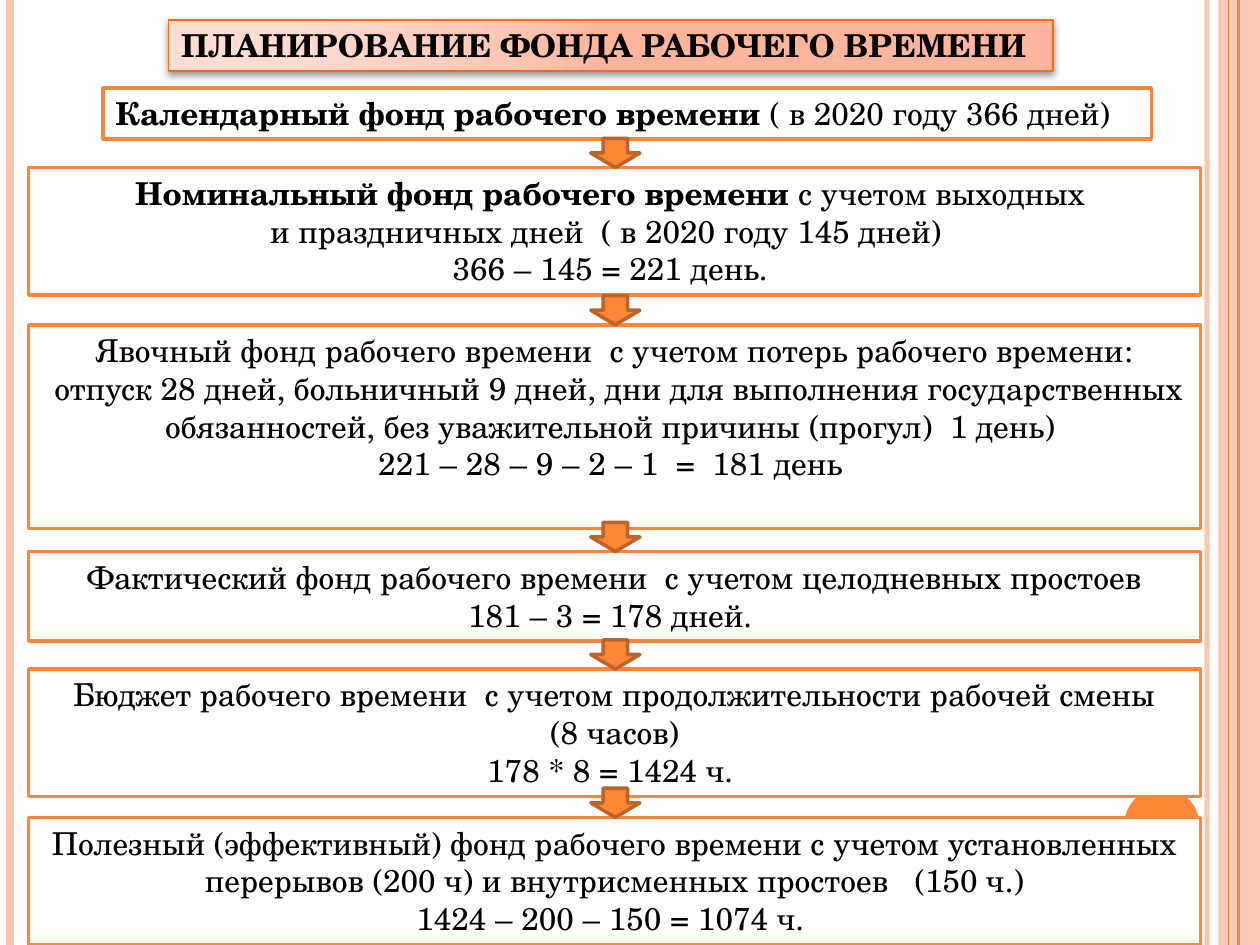
"""Build a slide on planning the working-time fund as a chain of boxes."""
from lxml.etree import SubElement
from pptx import Presentation
from pptx.dml.color import RGBColor
from pptx.enum.shapes import MSO_CONNECTOR as Connector, MSO_SHAPE as Shape
from pptx.enum.text import MSO_ANCHOR as Anchor, PP_ALIGN as Align
from pptx.oxml import parse_xml
from pptx.oxml.ns import nsdecls, qn
from pptx.util import Cm, Pt

ORANGE = RGBColor(0xFE, 0x86, 0x37)
DARK_ORANGE = RGBColor(0xBC, 0x63, 0x29)
TITLE_BORDER = RGBColor(0xFF, 0x6B, 0x0A)
PINK = RGBColor(0xFE, 0xC3, 0xAE)
WHITE = RGBColor(0xFF, 0xFF, 0xFF)
BLACK = RGBColor(0, 0, 0)
TITLE_STOPS = [(0, "FFDED5"), (30, "FFDBD0"), (75, "FFC8B6"), (100, "FFB59B")]

SLIDE_WIDTH, SLIDE_HEIGHT = 25.4, 19.05
STAGE_LEFT, STAGE_WIDTH = 0.58, 23.62
ARROW_LEFT, ARROW_WIDTH, ARROW_HEIGHT = 11.91, 0.99, 0.59

STRIPES = [(24.33, 3, 93), (0.2, 4.5, 100)]
THIN_STRIPES = [(24.97, 1.5), (24.77, 0.75)]

TITLE = [("ПЛАНИРОВАНИЕ ФОНДА РАБОЧЕГО ВРЕМЕНИ", "")]
CALENDAR_FUND = [("Календарный фонд рабочего времени ", "( в 2020 году 366 дней)")]
STAGES = [
    (3.38, 2.57, [
        ("Номинальный фонд рабочего времени ", "с учетом выходных "),
        ("", "и праздничных дней  ( в 2020 году 145 дней)  "),
        ("", "366 – 145 = 221 день. ")]),
    (6.55, 4.11, [
        ("", "Явочный фонд рабочего времени  с учетом потерь рабочего времени:"),
        ("", " отпуск 28 дней, больничный 9 дней, дни для выполнения государственных "
             "обязанностей, без уважительной причины (прогул)  1 день) "),
        ("", "221 – 28 – 9 – 2 – 1  =  181 день ")]),
    (11.12, 1.8, [
        ("", "Фактический фонд рабочего времени  с учетом целодневных простоев"),
        ("", "181 – 3 = 178 дней. ")]),
    (13.49, 2.57, [
        ("", "Бюджет рабочего времени  с учетом продолжительности рабочей смены"),
        ("", "(8 часов)"),
        ("", "178 * 8 = 1424 ч. ")]),
    (16.48, 2.57, [
        ("", "Полезный (эффективный) фонд рабочего времени с учетом установленных "
             "перерывов (200 ч) и внутрисменных простоев   (150 ч.)"),
        ("", "1424 – 200 – 150 = 1074 ч. ")]),
]


class FundSlide:
    """Slide with one shared style and a method for each kind of element."""

    font_name = "TeX Gyre Schola"
    font_size = Pt(18)

    def __init__(self, slide):
        self.slide = slide

    def set_opacity(self, element, percent):
        for color in element.iter(qn("a:srgbClr")):
            SubElement(color, qn("a:alpha"), val=str(percent * 1000))

    def stripe(self, left, weight, color, opacity=100):
        x = Cm(left)
        line = self.slide.shapes.add_connector(Connector.STRAIGHT, x, 0, x, Cm(SLIDE_HEIGHT))
        line.line.color.rgb = color
        line.line.width = Pt(weight)
        properties = line.line._get_or_add_ln().getparent()
        if opacity < 100:
            self.set_opacity(properties, opacity)
        SubElement(properties, qn("a:effectLst"))

    def figure(self, preset, left, top, width, height, fill, border=None, weight=2):
        figure = self.slide.shapes.add_shape(preset, Cm(left), Cm(top), Cm(width), Cm(height))
        figure.shadow.inherit = False
        figure.fill.solid()
        figure.fill.fore_color.rgb = fill
        if border is None:
            figure.line.fill.background()
        else:
            figure.line.color.rgb = border
            figure.line.width = Pt(weight)
        return figure

    def side_band(self, left, width, opacity):
        band = self.figure(Shape.RECTANGLE, left, 0, width, SLIDE_HEIGHT, PINK)
        self.set_opacity(band.element.spPr, opacity)

    def box(self, left, top, width, height, lines, align, border=ORANGE, weight=2):
        box = self.figure(Shape.RECTANGLE, left, top, width, height, WHITE, border, weight)
        frame = box.text_frame
        frame.word_wrap = True
        frame.vertical_anchor = Anchor.TOP
        for index, parts in enumerate(lines):
            paragraph = frame.add_paragraph() if index else frame.paragraphs[0]
            paragraph.alignment = align
            for text, bold in zip(parts, (True, False)):
                if text:
                    run = paragraph.add_run()
                    run.text = text
                    run.font.name = self.font_name
                    run.font.size = self.font_size
                    run.font.bold = bold
                    run.font.color.rgb = BLACK
        return box

    def title(self, left, top, width, height, lines):
        properties = self.box(left, top, width, height, lines, Align.LEFT,
                              TITLE_BORDER, 1).element.spPr
        stops = "".join(f'<a:gs pos="{position * 1000}"><a:srgbClr val="{color}"/></a:gs>'
                        for position, color in TITLE_STOPS)
        gradient = parse_xml(
            f'<a:gradFill {nsdecls("a")} rotWithShape="1"><a:gsLst>{stops}</a:gsLst>'
            '<a:path path="circle"><a:fillToRect l="5000" t="100000" r="120000" b="10000"/>'
            '</a:path></a:gradFill>')
        properties.replace(properties.find(qn("a:solidFill")), gradient)
        shadow = SubElement(properties.find(qn("a:effectLst")), qn("a:outerShdw"),
                            blurRad=str(Pt(4)), dist=str(Pt(2)), dir="5400000", rotWithShape="0")
        SubElement(shadow, qn("a:srgbClr"), val=str(BLACK))
        self.set_opacity(shadow, 40)

    def arrow_to(self, top):
        self.figure(Shape.DOWN_ARROW, ARROW_LEFT, top - ARROW_HEIGHT,
                    ARROW_WIDTH, ARROW_HEIGHT, ORANGE, DARK_ORANGE)


def main():
    deck = Presentation()
    deck.slide_width, deck.slide_height = Cm(SLIDE_WIDTH), Cm(SLIDE_HEIGHT)
    fund = FundSlide(deck.slides.add_slide(deck.slide_layouts[6]))

    for left, weight, opacity in STRIPES:
        fund.stripe(left, weight, PINK, opacity)
    fund.side_band(24.56, 0.84, 87)
    for left, weight in THIN_STRIPES:
        fund.stripe(left, weight, ORANGE)
    fund.figure(Shape.OVAL, 22.66, 15.88, 1.52, 1.52, ORANGE)

    fund.title(3.4, 0.41, 17.83, 1.02, TITLE)
    fund.box(2.08, 1.78, 21.13, 1.02, CALENDAR_FUND, Align.LEFT)
    for top, height, lines in STAGES:
        fund.box(STAGE_LEFT, top, STAGE_WIDTH, height, lines, Align.CENTER)
        fund.arrow_to(top)

    deck.save("out.pptx")


if __name__ == "__main__":
    main()
